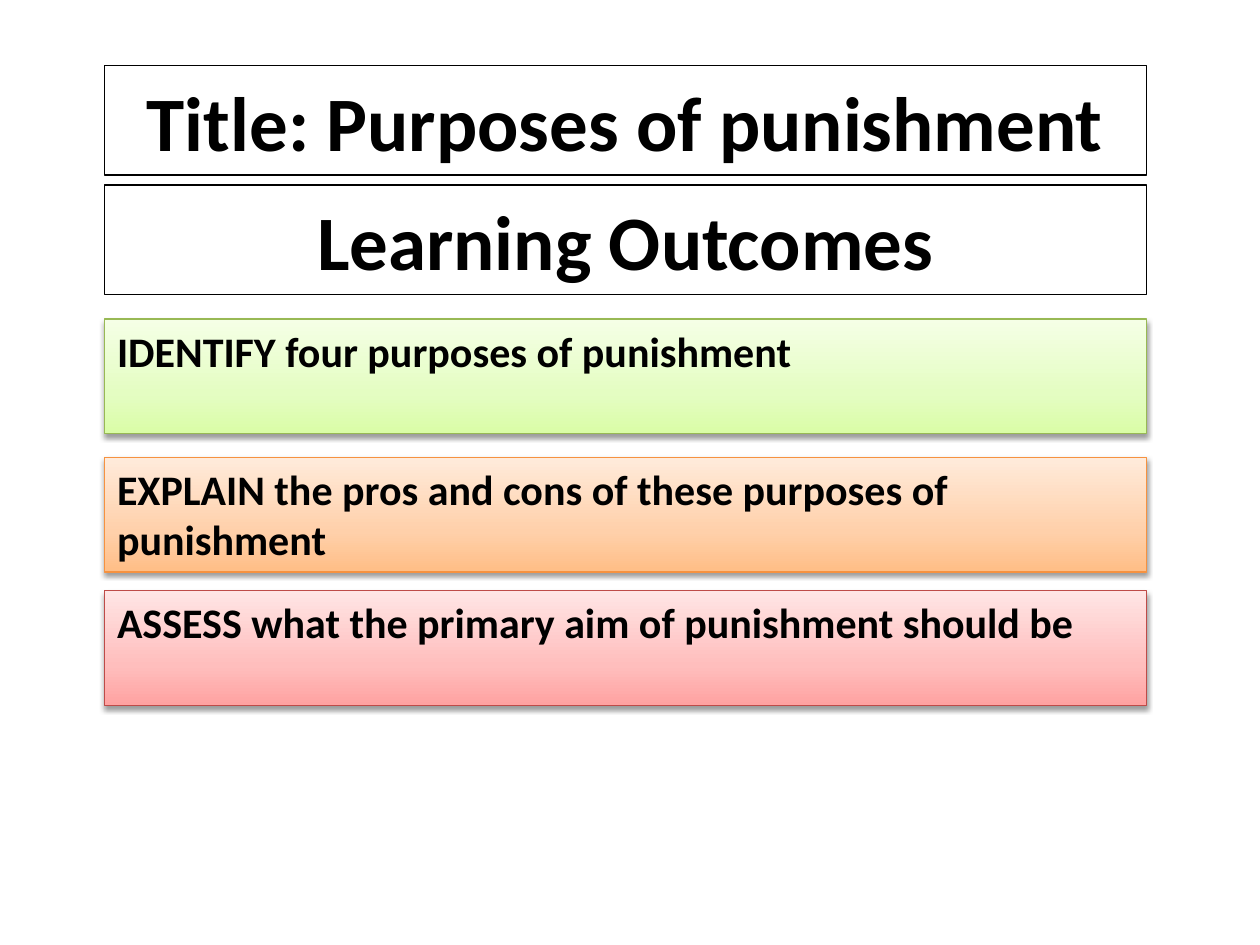
import pptx
import pptx.util
import pptx.dml.color
import pptx.enum.shapes
import pptx.enum.text
import pptx.oxml
import pptx.oxml.ns
from copy import deepcopy
from dataclasses import dataclass

Cm, Pt = pptx.util.Cm, pptx.util.Pt
RGB = pptx.dml.color.RGBColor.from_string
PP, MSO = pptx.enum.text.PP_ALIGN, pptx.enum.text.MSO_ANCHOR
qn = pptx.oxml.ns.qn


@dataclass(frozen=True)
class Theme:
    font: str = "Calibri"
    ink: str = "000000"
    paper: str = "FFFFFF"
    heading_size: int = 44
    outcome_size: int = 24
    # Outline, then gradient stops from bottom to top
    green: tuple = ("98B954", "DAFDA7", "E4FDC2", "F5FFE6")
    orange: tuple = ("F69240", "FFBE86", "FFD0AA", "FFEBDB")
    red: tuple = ("BE4B48", "FFA2A1", "FFBEBD", "FFE5E5")


THEME = Theme()
LEFT, WIDTH = 2.11, 21.01
HEADING_HEIGHT, OUTCOME_HEIGHT = 2.21, 2.31
STOPS = (0, 0.35, 1)


def set_attrs(obj, values):
    for name, value in values.items():
        setattr(obj, name, value)


def place(sp, top, height):
    set_attrs(sp, {"left": Cm(LEFT), "top": Cm(top),
                   "width": Cm(WIDTH), "height": Cm(height)})


def write(sp, text, size, align, anchor):
    tf = sp.text_frame
    set_attrs(tf, {"word_wrap": True, "vertical_anchor": anchor,
                   "auto_size": pptx.enum.text.MSO_AUTO_SIZE.NONE})
    p = tf.paragraphs[0]
    p.alignment = align
    r = p.add_run()
    r.text = text
    set_attrs(r.font, {"name": THEME.font, "size": Pt(size), "bold": True})
    r.font.color.rgb = RGB(THEME.ink)


def outline(sp, color):
    sp.line.color.rgb = RGB(color)
    sp.line.width = Pt(0.75)
    sp.shadow.inherit = False


def add_rectangle(s):
    return s.shapes.add_shape(
        pptx.enum.shapes.MSO_SHAPE.RECTANGLE, 0, 0, Cm(1), Cm(1))


def format_heading(sp, text, top):
    """Outlined box with a translucent fill and centred text."""
    place(sp, top, HEADING_HEIGHT)
    sp.fill.solid()
    sp.fill.fore_color.rgb = RGB(THEME.paper)
    color = sp._element.spPr.find(".//" + qn("a:srgbClr"))
    pptx.oxml.ns.nsdecls("a")
    color.append(pptx.oxml.parse_xml(
        f'<a:alpha {pptx.oxml.ns.nsdecls("a")} val="70000"/>'))
    outline(sp, THEME.ink)
    write(sp, text, THEME.heading_size, PP.CENTER, MSO.MIDDLE)


def fill_gradient(sp, colors):
    sp.fill.gradient()
    sp.fill.gradient_angle = 90
    stops = sp._element.spPr.find(".//" + qn("a:gsLst"))
    stops.append(deepcopy(stops[0]))
    for stop, position, color in zip(sp.fill.gradient_stops, STOPS, colors):
        stop.position = position
        stop.color.rgb = RGB(color)


def add_shadow(sp):
    effects = sp._element.spPr.find(qn("a:effectLst"))
    effects.append(pptx.oxml.parse_xml(
        f'<a:outerShdw {pptx.oxml.ns.nsdecls("a")} blurRad="{Pt(3.1)}" '
        f'dist="{Pt(1.6)}" dir="5400000" rotWithShape="0">'
        f'<a:srgbClr val="{THEME.ink}"><a:alpha val="38000"/></a:srgbClr>'
        '</a:outerShdw>'))


def add_outcome(s, text, top, palette):
    """Gradient card with one learning outcome."""
    sp = add_rectangle(s)
    place(sp, top, OUTCOME_HEIGHT)
    fill_gradient(sp, palette[1:])
    outline(sp, palette[0])
    add_shadow(sp)
    write(sp, text, THEME.outcome_size, PP.LEFT, MSO.TOP)


def main():
    prs = pptx.Presentation()
    set_attrs(prs, {"slide_width": Cm(25.4), "slide_height": Cm(19.05)})
    s = prs.slides.add_slide(prs.slide_layouts[5])

    # Headings
    format_heading(add_rectangle(s), "Title: Purposes of punishment", 1.32)
    format_heading(s.shapes.title, "Learning Outcomes", 3.73)

    # Learning outcomes
    for text, top, palette in (
        ("IDENTIFY four purposes of punishment", 6.43, THEME.green),
        ("EXPLAIN the pros and cons of these purposes of punishment",
         9.22, THEME.orange),
        ("ASSESS what the primary aim of punishment should be",
         11.91, THEME.red),
    ):
        add_outcome(s, text, top, palette)

    prs.save("out.pptx")


if __name__ == "__main__":
    main()
